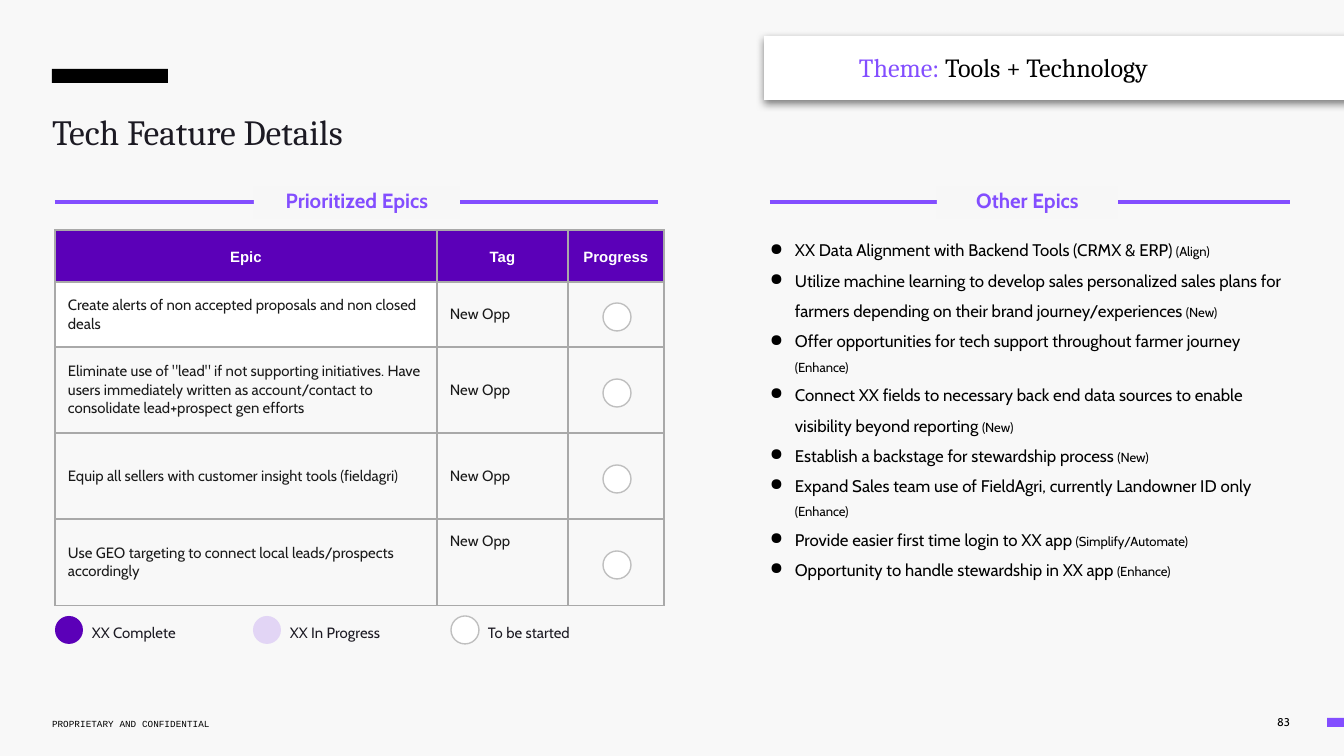
from lxml import etree
from pptx import Presentation
from pptx.dml.color import RGBColor
from pptx.enum.shapes import MSO_CONNECTOR, MSO_SHAPE
from pptx.enum.text import MSO_ANCHOR, PP_ALIGN
from pptx.oxml import parse_xml
from pptx.oxml.ns import nsdecls, qn
from pptx.util import Emu, Pt

RECTANGLE, OVAL = MSO_SHAPE.RECTANGLE, MSO_SHAPE.OVAL
STRAIGHT = MSO_CONNECTOR.STRAIGHT
LEFT, CENTER, RIGHT = PP_ALIGN.LEFT, PP_ALIGN.CENTER, PP_ALIGN.RIGHT
TOP, MIDDLE = MSO_ANCHOR.TOP, MSO_ANCHOR.MIDDLE

PURPLE, VIOLET, LILAC = "5B00B8", "834EFF", "E2D5F5"
WHITE, BLACK, INK, GREY = "FFFFFF", "000000", "1C1A23", "BFBFBF"
CIRCLE = 28
COLUMNS = [382, 131, 96]
ROWS = [52, 65, 86, 86, 87]
HEADERS = ["Epic", "Tag", "Progress"]
EPICS = [
    "Create alerts of non accepted proposals and non closed deals",
    'Eliminate use of "lead" if not supporting initiatives. Have users immediately '
    "written as account/contact to consolidate lead+prospect gen efforts",
    "Equip all sellers with customer insight tools (fieldagri)",
    "Use GEO targeting to connect local leads/prospects accordingly",
]
OTHER_EPICS = [
    ("XX Data Alignment with Backend Tools (CRMX & ERP) ", "(Align)"),
    ("Utilize machine learning to develop sales personalized sales plans for farmers "
     "depending on their brand journey/experiences ", "(New)"),
    ("Offer opportunities for tech support throughout farmer journey ", "(Enhance)"),
    ("Connect XX fields to necessary back end data sources to enable visibility "
     "beyond reporting ", "(New)"),
    ("Establish a backstage for stewardship process ", "(New)"),
    ("Expand Sales team use of FieldAgri, currently Landowner ID only ", "(Enhance)"),
    ("Provide easier first time login to XX app ", "(Simplify/Automate)"),
    ("Opportunity to handle stewardship in XX app ", "(Enhance)"),
]
LEGEND = [("XX Complete", PURPLE, None), ("XX In Progress", LILAC, None),
          ("To be started", WHITE, GREY)]


def px(length):
    return Emu(round(length * 914400 / 134.4))


def color(value):
    return RGBColor.from_string(value)


def style_font(font, size, name, value, bold=False):
    font.size, font.name, font.bold = Pt(size), name, bold
    font.color.rgb = color(value)


def set_insets(frame, left=0, top=0, right=0, bottom=0):
    frame.margin_left, frame.margin_top = px(left), px(top)
    frame.margin_right, frame.margin_bottom = px(right), px(bottom)


def write(frame, text, size, name, value, bold=False, align=LEFT, anchor=TOP, spacing=1.0):
    frame.word_wrap = True
    frame.vertical_anchor = anchor
    paragraph = frame.paragraphs[0]
    paragraph.text = text
    paragraph.alignment, paragraph.line_spacing = align, spacing
    style_font(paragraph.font, size, name, value, bold)


def add_text_frame(slide, *box):
    frame = slide.shapes.add_textbox(*map(px, box)).text_frame
    frame.word_wrap = True
    set_insets(frame)
    return frame


def add_shape(slide, kind, box, fill, line=None):
    shape = slide.shapes.add_shape(kind, *map(px, box))
    shape.shadow.inherit = False
    shape.fill.solid()
    shape.fill.fore_color.rgb = color(fill)
    if line:
        shape.line.color.rgb = color(line)
        shape.line.width = Pt(0.75)
    else:
        shape.line.fill.background()
    return shape


def add_title(slide, left, top, width, height):
    title = slide.shapes.title
    title.left, title.top, title.width, title.height = map(px, (left, top, width, height))
    set_insets(title.text_frame, top=21)
    write(title.text_frame, "Tech Feature Details", 19, "Cambria", INK, spacing=0.8)


def add_theme_banner(slide, left, top, width, height):
    banner = add_shape(slide, RECTANGLE, (left, top, width, height), WHITE)
    effects = banner._element.spPr.find(qn("a:effectLst"))
    effects.append(parse_xml(
        f'<a:outerShdw {nsdecls("a")} blurRad="57150" dist="19050" dir="5400000" '
        'algn="bl" rotWithShape="0"><a:srgbClr val="000000"><a:alpha val="50000"/>'
        "</a:srgbClr></a:outerShdw>"))
    frame = add_text_frame(slide, left + 95, top + 2, 440, 59)
    set_insets(frame, top=13, bottom=13)
    paragraph = frame.paragraphs[0]
    for text, value in (("Theme:", VIOLET), (" Tools + Technology", BLACK)):
        run = paragraph.add_run()
        run.text = text
        style_font(run.font, 14, "Cambria", value)


def add_section_heading(slide, text, left, top, width, label_left, label_width):
    middle = px(top + 15)
    line = slide.shapes.add_connector(STRAIGHT, px(left), middle, px(left + width), middle)
    line.line.color.rgb = color(VIOLET)
    line.line.width = Pt(2.25)
    etree.SubElement(line._element.spPr, qn("a:effectLst"))
    label = add_shape(slide, RECTANGLE, (left + label_left, top, label_width, 32), "F7F7F7")
    set_insets(label.text_frame)
    write(label.text_frame, text, 11, "Cabin", VIOLET, True, CENTER, spacing=1.04)


def format_cell(cell, fill):
    properties = cell._tc.get_or_add_tcPr()
    for side in ("lnL", "lnR", "lnT", "lnB"):
        properties.append(parse_xml(
            f'<a:{side} {nsdecls("a")} w="9525"><a:solidFill><a:srgbClr val="A9A9A9"/>'
            f"</a:solidFill></a:{side}>"))
    if fill:
        cell.fill.solid()
        cell.fill.fore_color.rgb = color(fill)
    else:
        cell.fill.background()
    set_insets(cell, 13, 13, 13, 13)


def add_epic_table(slide, left, top):
    table = slide.shapes.add_table(len(ROWS), len(COLUMNS), px(left), px(top),
                                   px(sum(COLUMNS)), px(sum(ROWS))).table
    table.first_row = table.horz_banding = False
    for column, width in zip(table.columns, COLUMNS):
        column.width = px(width)
    for row, height in zip(table.rows, ROWS):
        row.height = px(height)
    contents = [HEADERS] + [[epic, "New Opp", ""] for epic in EPICS]
    for r, texts in enumerate(contents):
        for c, text in enumerate(texts):
            cell = table.cell(r, c)
            cell.vertical_anchor = TOP if (r, c) == (len(EPICS), 1) else MIDDLE
            format_cell(cell, PURPLE if r == 0 else WHITE if (r, c) == (1, 0) else None)
            paragraph = cell.text_frame.paragraphs[0]
            paragraph.text = text
            if r == 0:
                paragraph.alignment, paragraph.line_spacing = CENTER, 1.15
                style_font(paragraph.font, 8, "Arial", WHITE, True)
            else:
                style_font(paragraph.font, 8, "Cabin", "1A1A1A")
    for r in range(1, len(ROWS)):
        center = top + sum(ROWS[:r]) + ROWS[r] // 2 + 3
        add_shape(slide, OVAL, (left + 548, center - CIRCLE // 2, CIRCLE, CIRCLE), WHITE, GREY)


def add_legend(slide, left, top, pitch):
    for index, (text, fill, line) in enumerate(LEGEND):
        x = left + index * pitch
        add_shape(slide, OVAL, (x, top, CIRCLE, CIRCLE), fill, line)
        frame = add_text_frame(slide, x + 32, top, 160, CIRCLE)
        set_insets(frame, 5, 5, 5, 5)
        write(frame, text, 8, "Cabin", INK, spacing=1.15)


def add_other_epics(slide, left, top, width, height):
    frame = add_text_frame(slide, left, top, width, height)
    for index, parts in enumerate(OTHER_EPICS):
        paragraph = frame.add_paragraph() if index else frame.paragraphs[0]
        properties = paragraph._p.get_or_add_pPr()
        properties.set("marL", str(px(32)))
        properties.set("indent", str(-px(25)))
        bullet_color = etree.SubElement(properties, qn("a:buClr"))
        etree.SubElement(bullet_color, qn("a:srgbClr"), val=BLACK)
        etree.SubElement(properties, qn("a:buChar"), char="●")
        paragraph.line_spacing = 1.5
        for text, size in zip(parts, (9, 7)):
            run = paragraph.add_run()
            run.text = text
            style_font(run.font, size, "Cabin", BLACK)


def add_footer(slide, left, top, width):
    write(add_text_frame(slide, left, top, 293, 20), "PROPRIETARY AND CONFIDENTIAL",
          5, "Courier New", BLACK, anchor=MIDDLE, spacing=1.15)
    write(add_text_frame(slide, left + width - 100, top - 3, 100, 24), "83",
          6, "Cabin", BLACK, align=RIGHT, anchor=MIDDLE)
    add_shape(slide, RECTANGLE, (1327, top + 5, 17, 9), VIOLET)


def main():
    presentation = Presentation()
    presentation.slide_width, presentation.slide_height = px(1344), px(756)
    slide = presentation.slides.add_slide(presentation.slide_layouts[5])
    slide.background.fill.solid()
    slide.background.fill.fore_color.rgb = color("F8F8F8")
    add_shape(slide, RECTANGLE, (52, 69, 116, 14), BLACK)
    add_footer(slide, 52, 713, 1238)
    add_other_epics(slide, 763, 230, 527, 464)
    add_epic_table(slide, 55, 230)
    add_section_heading(slide, "Prioritized Epics", 55, 187, 603, 199, 206)
    add_section_heading(slide, "Other Epics", 770, 187, 520, 167, 181)
    add_title(slide, 52, 97, 742, 86)
    add_legend(slide, 55, 616, 198)
    add_theme_banner(slide, 764, 36, 609, 64)
    presentation.save("out.pptx")


if __name__ == "__main__":
    main()
